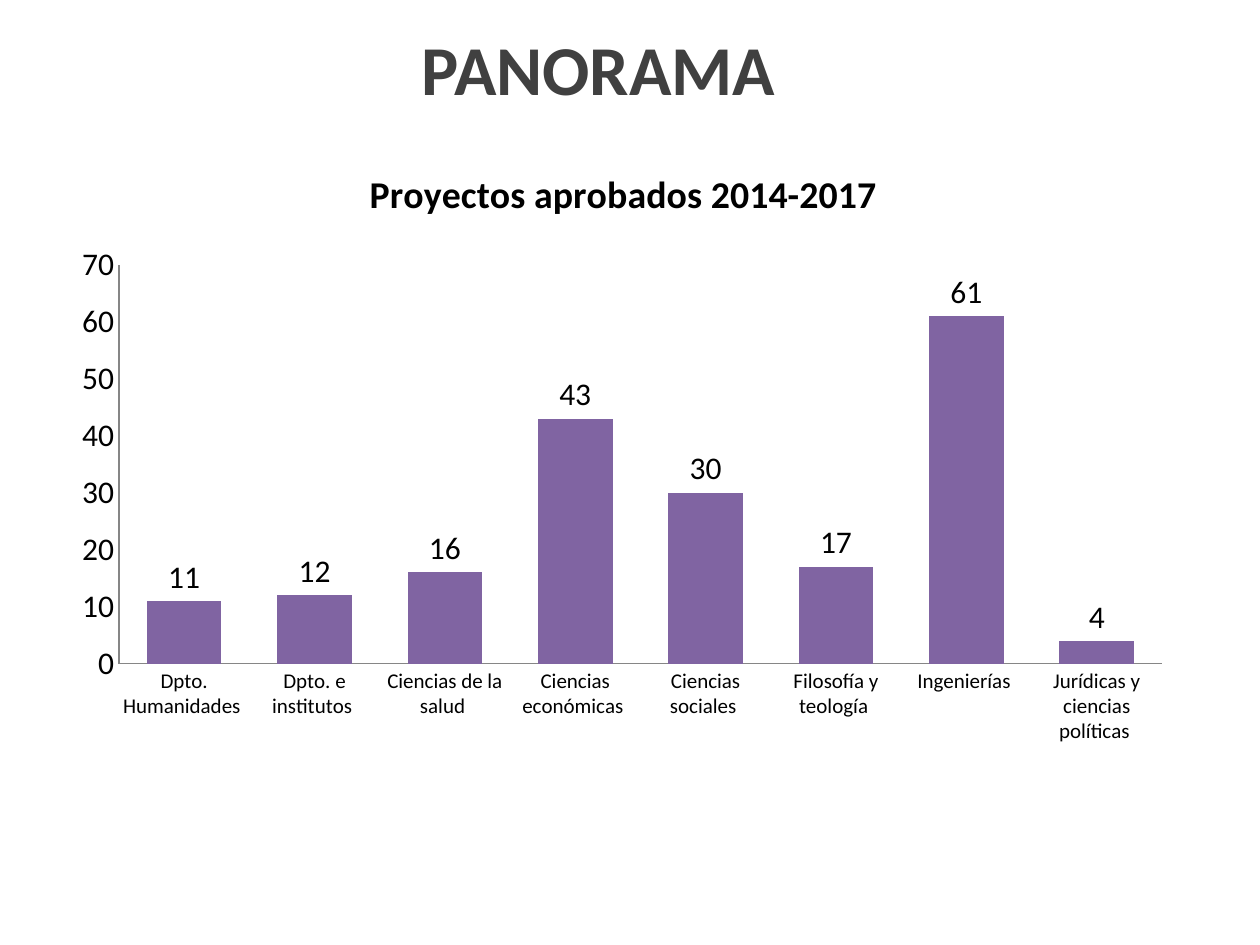
from lxml.etree import SubElement
from pptx import Presentation
from pptx.chart.data import CategoryChartData
from pptx.dml.color import RGBColor
from pptx.enum.chart import XL_CHART_TYPE, XL_LABEL_POSITION, XL_TICK_MARK
from pptx.enum.text import MSO_ANCHOR, PP_ALIGN
from pptx.oxml.ns import qn
from pptx.util import Inches, Pt

FONT = "Calibri"
BLACK = RGBColor(0x00, 0x00, 0x00)
DARK = RGBColor(0x40, 0x40, 0x40)
GREY = RGBColor(0x86, 0x86, 0x86)
PURPLE = RGBColor(0x80, 0x64, 0xA2)
WIDE, HIGH = Inches(10), Inches(7.5)

COUNTS = {
    "Dpto. Humanidades ": 11,
    "Dpto. e institutos ": 12,
    "Ciencias de la salud ": 16,
    "Ciencias económicas ": 43,
    "Ciencias sociales ": 30,
    "Filosofía y teología ": 17,
    "Ingenierías ": 61,
    "Jurídicas y ciencias políticas ": 4,
}


def area(left, top, wide, high):
    """Turn shares of the slide into a box."""
    return int(left * WIDE), int(top * HIGH), int(wide * WIDE), int(high * HIGH)


def style(font, size, color=BLACK, bold=False):
    """Set the look of a font."""
    font.name, font.size, font.bold = FONT, Pt(size), bold
    font.color.rgb = color


def add_title(slide, box, text):
    """Place the slide heading at the top of its box."""
    frame = slide.shapes.add_textbox(*box).text_frame
    frame.word_wrap = True
    frame.vertical_anchor = MSO_ANCHOR.TOP
    frame.text = text
    line = frame.paragraphs[0]
    line.alignment = PP_ALIGN.CENTER
    style(line.runs[0].font, 40, DARK, True)


def set_plot(chart, **shares):
    """Fix the inner plot area as shares of the chart."""
    plot = chart.element.find(".//" + qn("c:plotArea"))
    layout = plot.find(qn("c:layout"))
    if layout is None:
        layout = SubElement(plot, qn("c:layout"))
        plot.insert(0, layout)
    manual = SubElement(layout, qn("c:manualLayout"))
    modes = {"layoutTarget": "inner", "xMode": "edge", "yMode": "edge"}
    for name, value in {**modes, **shares}.items():
        SubElement(manual, qn("c:" + name)).set("val", str(value))


def add_bars(slide, box, title, counts):
    """Place the column chart with its title, axes and labels."""
    data = CategoryChartData()
    data.categories = list(counts)
    data.add_series("Series 1", list(counts.values()))
    chart = slide.shapes.add_chart(
        XL_CHART_TYPE.COLUMN_CLUSTERED, *box, data).chart
    style(chart.font, 18)
    chart.has_legend = False
    chart.has_title = True
    head = chart.chart_title
    head.include_in_layout = False
    head.text_frame.text = title
    style(head.text_frame.paragraphs[0].runs[0].font, 21.6, bold=True)
    for axis, size in ((chart.category_axis, 12), (chart.value_axis, 18)):
        axis.has_major_gridlines = False
        axis.major_tick_mark = axis.minor_tick_mark = XL_TICK_MARK.NONE
        axis.format.line.color.rgb = GREY
        style(axis.tick_labels.font, size)
    scale = chart.value_axis
    scale.minimum_scale, scale.maximum_scale, scale.major_unit = 0, 70, 10
    plot = chart.plots[0]
    plot.gap_width = 75
    plot.vary_by_categories = False
    fill = plot.series[0].format.fill
    fill.solid()
    fill.fore_color.rgb = PURPLE
    labels = plot.series[0].data_labels
    labels.show_value = True
    labels.position = XL_LABEL_POSITION.OUTSIDE_END
    style(labels.font, 18)
    set_plot(chart, x=0.05, y=0.2, w=0.93, h=0.65)


def main():
    """Build and save the slide."""
    deck = Presentation()
    deck.slide_width, deck.slide_height = WIDE, HIGH
    slide = deck.slides.add_slide(deck.slide_layouts[6])
    add_title(slide, area(0.05, 0.02, 0.85, 0.2), "PANORAMA")
    add_bars(slide, area(0.05, 0.15, 0.89, 0.65),
             "Proyectos aprobados 2014-2017", COUNTS)
    deck.save("out.pptx")


if __name__ == "__main__":
    main()
